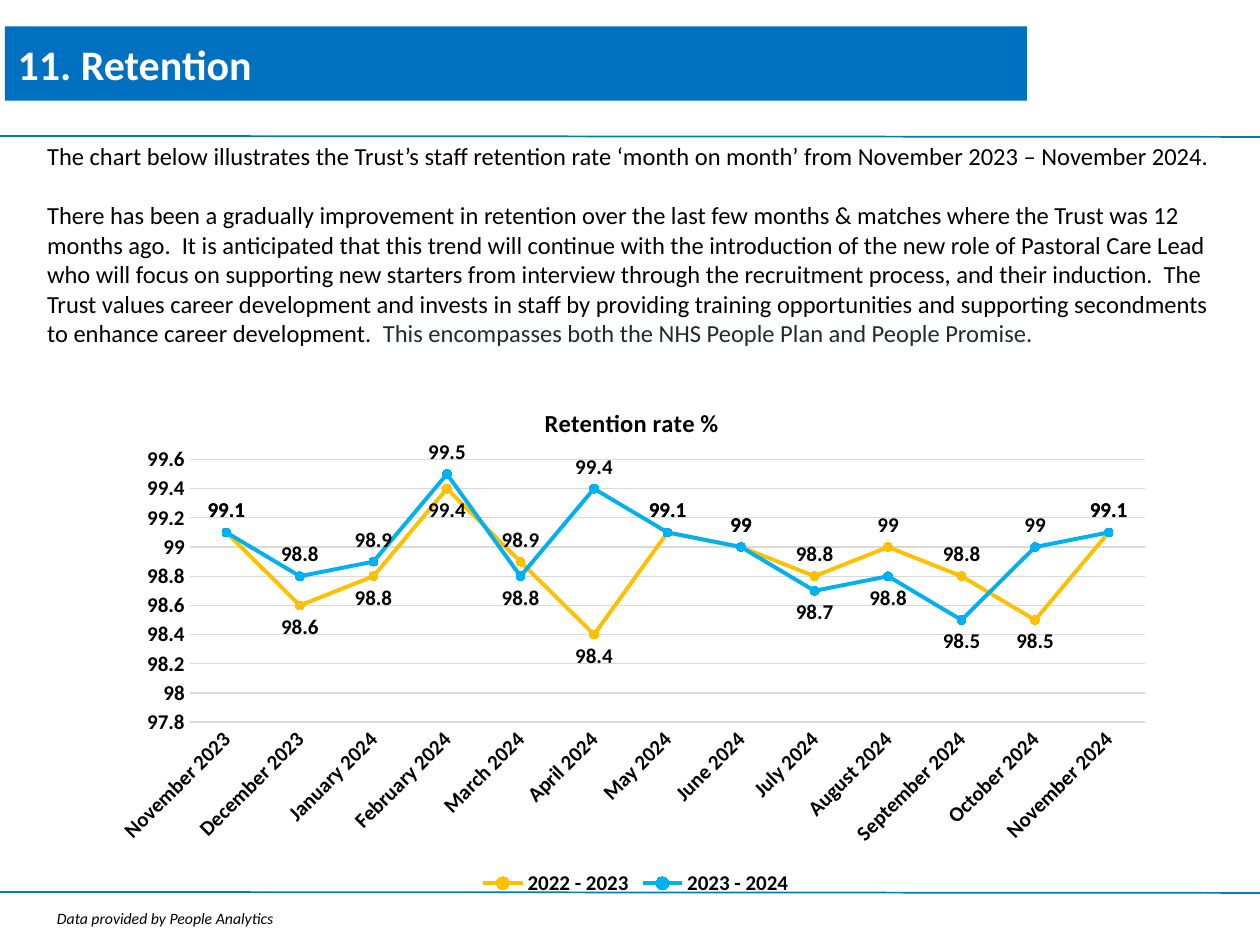
from dataclasses import dataclass

import pptx
import pptx.chart.data
import pptx.dml.color
import pptx.enum.chart
import pptx.enum.shapes
import pptx.enum.text
import pptx.oxml
import pptx.util
from lxml import etree
from pptx.oxml.ns import qn
from pptx.util import Cm, Pt

FONT = "Calibri"
BLACK, WHITE, GREY = "000000", "FFFFFF", "D9D9D9"
BANNER_BLUE, RULE_BLUE, SLATE = "0070C0", "007AC3", "202A30"
CHART_FONT = {"name": FONT, "size": Pt(12), "bold": True}
MONTHS = [
    "November 2023", "December 2023", "January 2024", "February 2024",
    "March 2024", "April 2024", "May 2024", "June 2024", "July 2024",
    "August 2024", "September 2024", "October 2024", "November 2024",
]
INTRO = (
    "The chart below illustrates the Trust’s staff retention rate ‘month on month’ "
    "from November 2023 – November 2024."
)
COMMENTARY = (
    "There has been a gradually improvement in retention over the last few months & "
    "matches where the Trust was 12 months ago.  It is anticipated that this trend will "
    "continue with the introduction of the new role of Pastoral Care Lead who will focus "
    "on supporting new starters from interview through the recruitment process, and their "
    "induction.  The Trust values career development and invests in staff by providing "
    "training opportunities and supporting secondments to enhance career development.  "
)
PROMISE = "This encompasses both the NHS People Plan and People Promise."


@dataclass
class Span:
    text: str
    colour: str = BLACK


@dataclass
class YearSeries:
    name: str
    colour: str
    rates: list[float]
    labels_below: list[int]


YEARS = [
    YearSeries("2022 - 2023", "FFC000",
               [99.1, 98.6, 98.8, 99.4, 98.9, 98.4, 99.1, 99, 98.8, 99, 98.8, 98.5, 99.1],
               [1, 2, 3, 5, 11]),
    YearSeries("2023 - 2024", "00B0F0",
               [99.1, 98.8, 98.9, 99.5, 98.8, 99.4, 99.1, 99, 98.7, 98.8, 98.5, 99, 99.1],
               [4, 8, 9, 10]),
]


def rgb(value: str) -> pptx.dml.color.RGBColor:
    return pptx.dml.color.RGBColor.from_string(value)


def paint(fill, colour: str) -> None:
    fill.solid()
    fill.fore_color.rgb = rgb(colour)


def style_font(font, formats: dict, colour: str = BLACK) -> None:
    for name, value in formats.items():
        setattr(font, name, value)
    font.color.rgb = rgb(colour)


def style_line(line, colour: str, width: float) -> None:
    line.color.rgb = rgb(colour)
    line.width = Pt(width)


def add_rule(page, top: float) -> None:
    rule = page.shapes.add_connector(
        pptx.enum.shapes.MSO_CONNECTOR.STRAIGHT, 0, Cm(top), Cm(25.4), Cm(top + 0.02))
    style_line(rule.line, RULE_BLUE, 1)
    etree.SubElement(rule.element.spPr, qn("a:effectLst"))


def add_text(page, left: float, top: float, width: float, height: float,
             paragraphs: list[list[Span]], formats: dict, gap: float = 0) -> None:
    box = page.shapes.add_textbox(Cm(left), Cm(top), Cm(width), Cm(height))
    frame = box.text_frame
    frame.word_wrap = True
    for index, spans in enumerate(paragraphs):
        para = frame.add_paragraph() if index else frame.paragraphs[0]
        para.space_before = Pt(gap if index else 0)
        for span in spans:
            run = para.add_run()
            run.text = span.text
            style_font(run.font, formats, span.colour)


def add_banner(page, text: str) -> None:
    banner = page.shapes.title
    banner.left, banner.top, banner.width, banner.height = Cm(0.1), Cm(0.53), Cm(20.6), Cm(1.5)
    paint(banner.fill, BANNER_BLUE)
    frame = banner.text_frame
    frame.text = text
    frame.auto_size = pptx.enum.text.MSO_AUTO_SIZE.NONE
    frame.vertical_anchor = pptx.enum.text.MSO_ANCHOR.MIDDLE
    para = frame.paragraphs[0]
    para.alignment = pptx.enum.text.PP_ALIGN.LEFT
    style_font(para.runs[0].font, {"name": FONT, "size": Pt(24), "bold": True}, WHITE)


def set_layout(element, before: str, inner: bool = False, **places: float) -> None:
    """Place a chart part by fractions of the chart area."""
    for old in element.findall(qn("c:layout")):
        element.remove(old)
    layout = etree.Element(qn("c:layout"))
    manual = etree.SubElement(layout, qn("c:manualLayout"))
    values = {"layoutTarget": "inner"} if inner else {}
    values |= {"xMode": "edge", "yMode": "edge"} | places
    for name, value in values.items():
        etree.SubElement(manual, qn(f"c:{name}")).set("val", str(value))
    element.find(qn(before)).addprevious(layout)


def style_series(series, year: YearSeries) -> None:
    position = pptx.enum.chart.XL_LABEL_POSITION
    series.smooth = False
    style_line(series.format.line, year.colour, 2.25)
    series.marker.style = pptx.enum.chart.XL_MARKER_STYLE.CIRCLE
    series.marker.size = 5
    paint(series.marker.format.fill, year.colour)
    style_line(series.marker.format.line, year.colour, 0.75)
    labels = series.data_labels
    labels.show_value = True
    labels.position = position.ABOVE
    style_font(labels.font, CHART_FONT)
    for index in year.labels_below:
        label = series.points[index].data_label
        style_font(label.font, CHART_FONT)
        label.position = position.BELOW


def add_retention_chart(page) -> None:
    data = pptx.chart.data.CategoryChartData()
    data.categories = MONTHS
    for year in YEARS:
        data.add_series(year.name, year.rates)
    chart = page.shapes.add_chart(
        pptx.enum.chart.XL_CHART_TYPE.LINE_MARKERS,
        Cm(2.11), Cm(7.57), Cm(21.41), Cm(10.59), data).chart
    style_font(chart.font, CHART_FONT)
    chart.plots[0].vary_by_categories = False

    # Title and legend
    chart.has_title = True
    title = chart.chart_title
    title.text_frame.text = "Retention rate %"
    style_font(title.text_frame.paragraphs[0].runs[0].font, CHART_FONT | {"size": Pt(14)})
    title.include_in_layout = False
    set_layout(title._element, "c:overlay", x=0.41, y=0.05)
    chart.has_legend = True
    chart.legend.position = pptx.enum.chart.XL_LEGEND_POSITION.BOTTOM
    chart.legend.include_in_layout = False
    style_font(chart.legend.font, CHART_FONT)

    # Axes
    months, rates = chart.category_axis, chart.value_axis
    for axis in (months, rates):
        axis.major_tick_mark = pptx.enum.chart.XL_TICK_MARK.NONE
        style_font(axis.tick_labels.font, CHART_FONT)
    months._element.find(qn("c:txPr")).find(qn("a:bodyPr")).set("rot", "-2700000")
    style_line(months.format.line, GREY, 0.75)
    rates.format.line.fill.background()
    style_line(rates.major_gridlines.format.line, GREY, 0.75)
    rates.minimum_scale, rates.maximum_scale, rates.major_unit = 97.8, 99.6, 0.2
    plot_area = chart._chartSpace.chart.plotArea
    set_layout(plot_area, "c:lineChart", inner=True, x=0.08, y=0.16, w=0.9, h=0.5)

    for series, year in zip(chart.plots[0].series, YEARS):
        style_series(series, year)


def main() -> None:
    deck = pptx.Presentation()
    deck.slide_width, deck.slide_height = Cm(25.4), Cm(19.05)
    page = deck.slides.add_slide(deck.slide_layouts[5])

    # Heading and rules
    add_banner(page, "11. Retention")
    for top in (2.74, 17.98):
        add_rule(page, top)

    # Commentary and source note
    add_text(page, 0.7, 2.72, 24.2, 5.64,
             [[Span(INTRO)], [Span(COMMENTARY), Span(PROMISE, SLATE)]],
             {"name": FONT, "size": Pt(14)}, gap=17)
    add_text(page, 0.9, 18.19, 6, 0.64, [[Span("Data provided by People Analytics")]],
             {"name": FONT, "size": Pt(9), "italic": True})

    add_retention_chart(page)
    deck.save("out.pptx")


if __name__ == "__main__":
    main()
